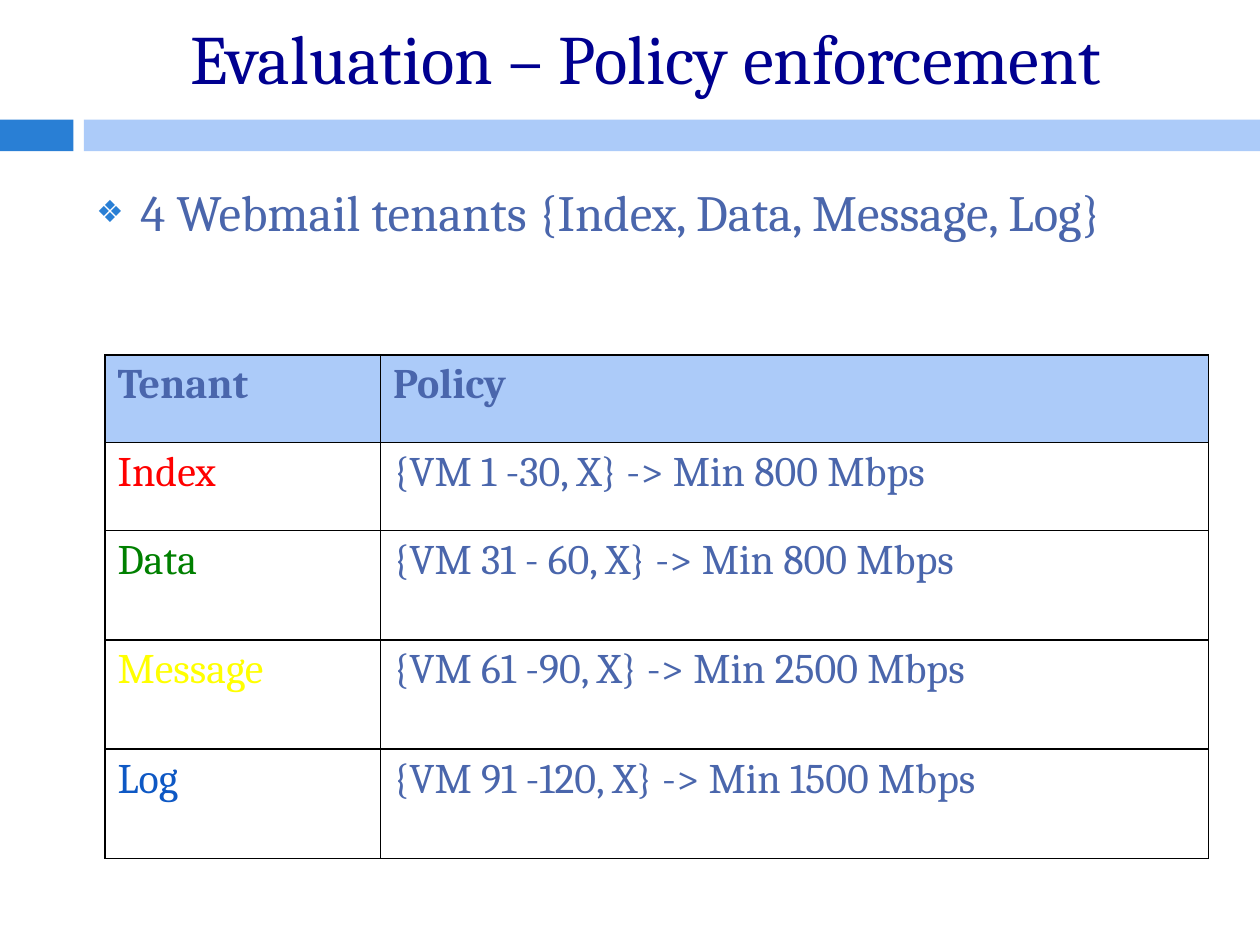
import pptx
import pptx.dml.color
import pptx.enum.shapes
import pptx.enum.text
import pptx.oxml
import pptx.oxml.ns
import pptx.util

Pt = pptx.util.Pt
RGBColor = pptx.dml.color.RGBColor

NAVY = RGBColor(0x00, 0x00, 0x90)
SLATE = RGBColor(0x4A, 0x66, 0xAC)
BLUE = RGBColor(0x29, 0x7F, 0xD5)
PALE_BLUE = RGBColor(0xAC, 0xCB, 0xF9)
RED = RGBColor(0xFF, 0x00, 0x00)
GREEN = RGBColor(0x00, 0x80, 0x00)
YELLOW = RGBColor(0xFF, 0xFF, 0x00)
LOG_BLUE = RGBColor(0x0E, 0x58, 0xC4)
BLACK = RGBColor(0x00, 0x00, 0x00)

FONT = "Cambria"
TITLE = "Evaluation – Policy enforcement"
SUMMARY = "4 Webmail tenants {Index, Data, Message, Log}"
POLICIES = [
    ("Tenant", "Policy", SLATE, 50),
    ("Index", "{VM 1 -30, X} -> Min 800 Mbps", RED, 50.4),
    ("Data", "{VM 31 - 60, X} -> Min 800 Mbps", GREEN, 62.5),
    ("Message", "{VM 61 -90, X} -> Min 2500 Mbps", YELLOW, 62.5),
    ("Log", "{VM 91 -120, X} -> Min 1500 Mbps", LOG_BLUE, 62.5),
]
COLUMN_WIDTHS = [157.5, 473]
BANDS = [(0, 42, BLUE), (48, 672, PALE_BLUE)]
CONTENT_LEFT, CONTENT_WIDTH = 48, 642


def style(paragraph, size, color, bold=False):
    paragraph.font.name = FONT
    paragraph.font.size = Pt(size)
    paragraph.font.color.rgb = color
    paragraph.font.bold = bold


def add_bullet(paragraph, symbol, color, percent, indent):
    properties = paragraph._p.get_or_add_pPr()
    properties.set("marL", str(Pt(indent)))
    properties.set("indent", str(-Pt(indent)))
    namespace = pptx.oxml.ns.nsdecls("a")
    for xml in (
        f'<a:buClr {namespace}><a:srgbClr val="{color}"/></a:buClr>',
        f'<a:buSzPct {namespace} val="{percent * 1000}"/>',
        f'<a:buFont {namespace} typeface="Arial"/>',
        f'<a:buChar {namespace} char="{symbol}"/>',
    ):
        properties.insert_element_before(
            pptx.oxml.parse_xml(xml), "a:tabLst", "a:defRPr", "a:extLst")


def add_borders(cell, color, width):
    properties = cell._tc.get_or_add_tcPr()
    namespace = pptx.oxml.ns.nsdecls("a")
    for position, side in enumerate(("lnL", "lnR", "lnT", "lnB")):
        properties.insert(position, pptx.oxml.parse_xml(
            f'<a:{side} {namespace} w="{Pt(width)}"><a:solidFill>'
            f'<a:srgbClr val="{color}"/></a:solidFill></a:{side}>'))


def main():
    presentation = pptx.Presentation()
    presentation.slide_width, presentation.slide_height = Pt(720), Pt(540)
    slide = presentation.slides.add_slide(presentation.slide_layouts[5])

    for left, width, color in BANDS:
        band = slide.shapes.add_shape(
            pptx.enum.shapes.MSO_SHAPE.RECTANGLE, Pt(left), Pt(68.4), Pt(width), Pt(18))
        band.shadow.inherit = False
        band.fill.solid()
        band.fill.fore_color.rgb = color
        band.line.fill.background()

    title = slide.shapes.title
    title.left, title.top = Pt(CONTENT_LEFT), Pt(0.7)
    title.width, title.height = Pt(CONTENT_WIDTH), Pt(63.4)
    title.text_frame.text = TITLE
    title.text_frame.auto_size = pptx.enum.text.MSO_AUTO_SIZE.NONE
    title.text_frame.vertical_anchor = pptx.enum.text.MSO_ANCHOR.MIDDLE
    title.text_frame.paragraphs[0].alignment = pptx.enum.text.PP_ALIGN.CENTER
    style(title.text_frame.paragraphs[0], 39.6, NAVY)

    summary = slide.shapes.add_textbox(
        Pt(CONTENT_LEFT), Pt(100), Pt(CONTENT_WIDTH), Pt(373))
    summary.text_frame.word_wrap = True
    summary.text_frame.text = SUMMARY
    tenants = summary.text_frame.paragraphs[0]
    tenants.space_before = Pt(7)
    style(tenants, 29, SLATE)
    add_bullet(tenants, "❖", BLUE, 60, 25.2)

    table = slide.shapes.add_table(
        len(POLICIES), len(COLUMN_WIDTHS), Pt(60), Pt(202.8),
        Pt(sum(COLUMN_WIDTHS)), Pt(sum(row[-1] for row in POLICIES))).table
    table.first_row = table.horz_banding = False
    for column, width in zip(table.columns, COLUMN_WIDTHS):
        column.width = Pt(width)
    for row_index, (tenant, policy, tenant_color, height) in enumerate(POLICIES):
        table.rows[row_index].height = Pt(height)
        is_header = row_index == 0
        for column_index, (text, color) in enumerate(
                [(tenant, tenant_color), (policy, SLATE)]):
            cell = table.cell(row_index, column_index)
            cell.text = text
            style(cell.text_frame.paragraphs[0], 24, color, is_header)
            if is_header:
                cell.fill.solid()
                cell.fill.fore_color.rgb = PALE_BLUE
            else:
                cell.fill.background()
            add_borders(cell, BLACK, 1)

    presentation.save("out.pptx")


if __name__ == "__main__":
    main()
